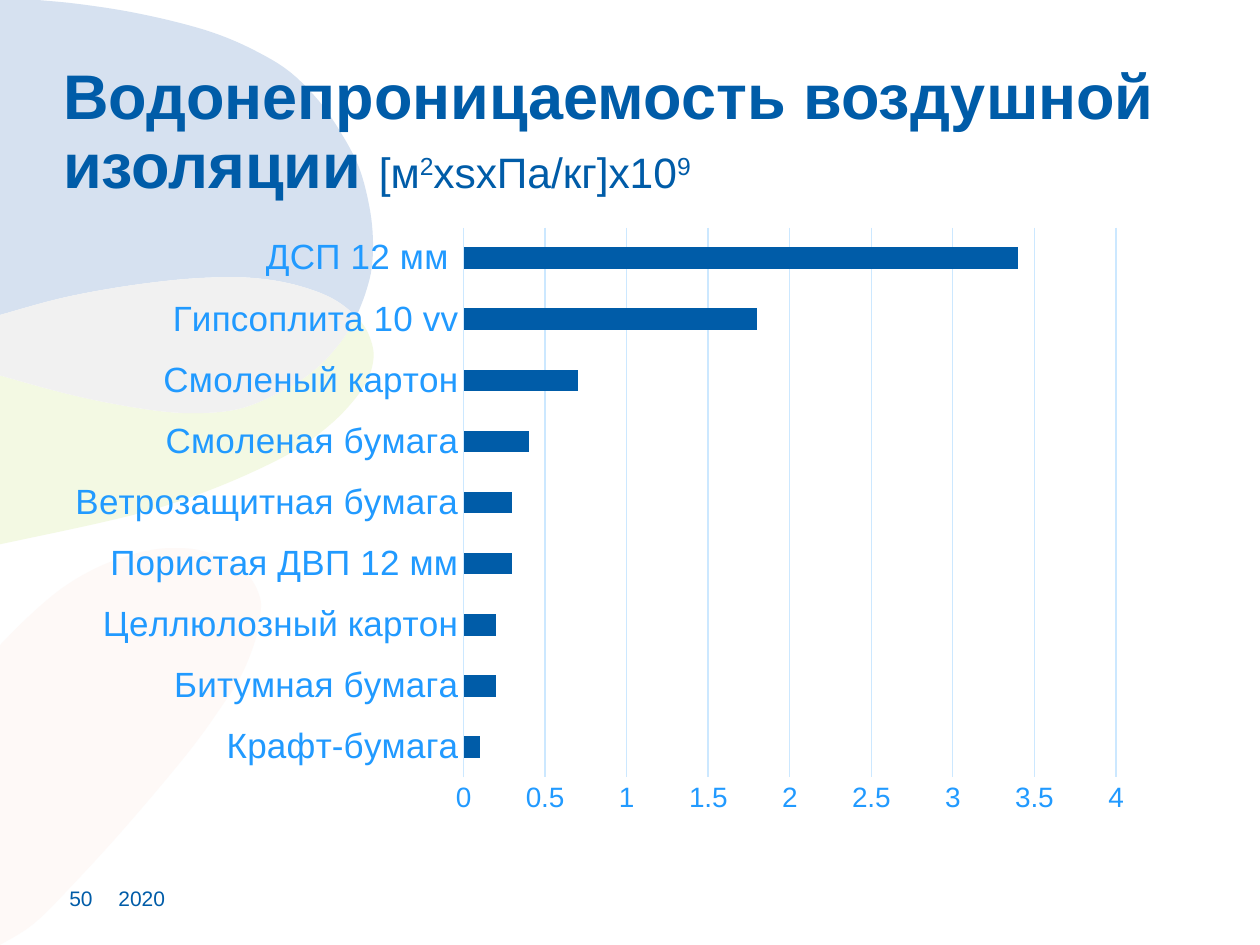
from lxml import etree
from pptx import Presentation
from pptx.chart.data import CategoryChartData
from pptx.dml.color import RGBColor
from pptx.enum.chart import XL_CHART_TYPE as ChartType, XL_TICK_MARK as TickMark
from pptx.enum.text import MSO_ANCHOR as Anchor, MSO_AUTO_SIZE as AutoSize, PP_ALIGN as Align
from pptx.util import Pt

PX = 9144  # EMU per px, 100 px to the inch
STEPS = 5  # line segments per curve span
CHART_NS = "http://schemas.openxmlformats.org/drawingml/2006/chart"


def color(hex_string):
    return RGBColor.from_string(hex_string)


def px(*lengths):
    return [length * PX for length in lengths]


def spline(points):
    """Smooth curve (Catmull-Rom) through the given points."""
    padded = [points[0], *points, points[-1]]
    curve = [points[0]]
    for a, b, c, d in zip(padded, padded[1:], padded[2:], padded[3:]):
        for step in range(1, STEPS + 1):
            t = step / STEPS
            curve.append(tuple(
                (2 * q + (r - p) * t + (2 * p - 5 * q + 4 * r - s) * t ** 2
                 + (3 * q - p - 3 * r + s) * t ** 3) / 2
                for p, q, r, s in zip(a, b, c, d)))
    return curve


class SlideBuilder:
    font_name = "Arial"
    dark = "005CA8"
    light = "219AFF"
    grid = "CCE8FF"

    def __init__(self, slide):
        self.slide = slide

    def style(self, font, size=None, hex_color=None):
        font.name = self.font_name
        font.color.rgb = color(hex_color or self.dark)
        if size:
            font.size = Pt(size)

    def prepare_frame(self, frame, anchor):
        frame.margin_left = frame.margin_right = frame.margin_top = frame.margin_bottom = 0
        frame.word_wrap = True
        frame.auto_size = AutoSize.NONE
        frame.vertical_anchor = anchor

    def petal(self, fill, *edges):
        """Closed shape whose outline runs along smooth edges."""
        outline = [px(*point) for edge in edges for point in spline(edge)]
        builder = self.slide.shapes.build_freeform(*outline[0], scale=1.0)
        builder.add_line_segments(outline[1:], close=True)
        shape = builder.convert_to_shape()
        shape.shadow.inherit = False
        shape.fill.solid()
        shape.fill.fore_color.rgb = color(fill)
        shape.line.fill.background()

    def label(self, text, *box):
        frame = self.slide.shapes.add_textbox(*px(*box)).text_frame
        self.prepare_frame(frame, Anchor.BOTTOM)
        paragraph = frame.paragraphs[0]
        paragraph.text = text
        self.style(paragraph.font, 12)

    def title(self, runs, *box):
        title = self.slide.shapes.title
        title.left, title.top, title.width, title.height = px(*box)
        self.slide.shapes._spTree.append(title._element)  # in front of the petals
        self.prepare_frame(title.text_frame, Anchor.TOP)
        paragraph = title.text_frame.paragraphs[0]
        paragraph.alignment = Align.LEFT
        paragraph.line_spacing = 0.9
        self.style(paragraph.font)
        for text, size, bold, baseline in runs:
            run = paragraph.add_run()
            run.text = text
            run.font.size = Pt(size)
            run.font.bold = bold
            if baseline:
                run.font._element.set("baseline", str(baseline * 1000))

    def style_axis(self, axis, size):
        axis.major_tick_mark = axis.minor_tick_mark = TickMark.NONE
        self.style(axis.tick_labels.font, size, self.light)

    def style_line(self, line):
        line.color.rgb = color(self.grid)
        line.width = Pt(0.75)

    def bar_chart(self, values, plot_layout, *box):
        data = CategoryChartData()
        data.categories = list(values)
        data.add_series("Series 1", list(values.values()))
        chart = self.slide.shapes.add_chart(ChartType.BAR_CLUSTERED, *px(*box), data).chart
        chart.has_legend = chart.has_title = False
        self.style(chart.font, 10)

        plot = chart.plots[0]
        plot.gap_width = 182
        plot.vary_by_categories = False
        fill = plot.series[0].format.fill
        fill.solid()
        fill.fore_color.rgb = color(self.dark)

        self.style_axis(chart.category_axis, 20)
        self.style_line(chart.category_axis.format.line)
        value_axis = chart.value_axis
        self.style_axis(value_axis, 16)
        value_axis.minimum_scale, value_axis.maximum_scale = 0, 4
        value_axis.major_unit = 0.5
        value_axis.tick_labels.number_format = "General"
        value_axis.tick_labels.number_format_is_linked = False
        value_axis.format.line.fill.background()
        value_axis.has_major_gridlines = True
        self.style_line(value_axis.major_gridlines.format.line)
        self.place_plot(chart, plot_layout)

    def place_plot(self, chart, plot_layout):
        """Fix the inner plot area as fractions of the chart."""
        def tag(name):
            return f"{{{CHART_NS}}}{name}"

        plot_area = chart._chartSpace.find(f".//{tag('plotArea')}")
        for old in plot_area.findall(tag("layout")):
            plot_area.remove(old)
        layout = etree.Element(tag("layout"))
        plot_area.insert(0, layout)
        manual = etree.SubElement(layout, tag("manualLayout"))
        settings = {"layoutTarget": "inner", "xMode": "edge", "yMode": "edge", **plot_layout}
        for name, value in settings.items():
            etree.SubElement(manual, tag(name), val=str(value))


# Edges of the background petals; the wave edges are shared by neighbours
CORAL_EDGE = [(0, 512), (23, 489), (49, 467), (76, 451), (102, 441), (123, 436), (139, 435),
              (155, 436), (172, 441), (187, 448), (199, 459), (206, 473), (207, 485), (203, 507),
              (192, 535), (175, 562), (148, 599), (100, 656), (58, 702), (27, 733), (0, 750)]
WAVE_TOP = [(0, 250), (47, 237), (94, 228), (141, 222), (178, 220), (205, 221), (230, 225),
            (253, 232), (269, 240), (283, 251)]
WAVE_BOTTOM = [(283, 251), (273, 268), (258, 286), (240, 301), (215, 315), (188, 325),
               (156, 328), (124, 326), (82, 319), (43, 310), (0, 298)]
GREEN_EDGE = [(283, 251), (291, 262), (296, 276), (296, 288), (291, 303), (279, 320), (261, 338),
              (235, 357), (202, 374), (164, 390), (123, 404), (75, 416), (0, 432)]
BLUE_EDGE = [(30, 0), (61, 3), (101, 9), (142, 18), (175, 28), (204, 41), (230, 57), (253, 80),
             (271, 106), (285, 133), (293, 163), (296, 189), (295, 213), (290, 233), (283, 251)]

PERMEABILITY = {
    "Крафт-бумага": 0.1,
    "Битумная бумага": 0.2,
    "Целлюлозный картон": 0.2,
    "Пористая ДВП 12 мм": 0.3,
    "Ветрозащитная бумага": 0.3,
    "Смоленая бумага": 0.4,
    "Смоленый картон": 0.7,
    "Гипсоплита 10 vv": 1.8,
    "ДСП 12 мм ": 3.4,
}

# Text, size, bold, baseline shift in percent
TITLE_RUNS = [
    ("Водонепроницаемость воздушной изоляции ", 36, True, 0),
    ("[м", 24.3, False, 0),
    ("2", 24.3, False, 30),
    ("xsxПа/кг]x10", 24.3, False, 0),
    ("9", 24.3, False, 30),
]


def main():
    presentation = Presentation()
    presentation.slide_width, presentation.slide_height = px(1000, 750)
    slide = presentation.slides.add_slide(presentation.slide_layouts[5])
    builder = SlideBuilder(slide)

    # Background petals
    builder.petal("FEF9F7", CORAL_EDGE)
    builder.petal("F3F9E3", GREEN_EDGE, WAVE_BOTTOM[::-1])
    builder.petal("D6E1F0", [(0, 0), (30, 0)], BLUE_EDGE, WAVE_TOP[::-1])
    builder.petal("F1F1F1", WAVE_TOP, WAVE_BOTTOM)

    # Footer
    builder.label("2020", 94, 707, 70, 16)
    builder.label("50", 55, 707, 39, 16)

    # Chart and title
    plot_layout = {"x": 0.38, "y": 0.02, "w": 0.6, "h": 0.9}
    builder.bar_chart(PERMEABILITY, plot_layout, 40, 171, 863, 485)
    builder.title(TITLE_RUNS, 50, 52, 900, 69)

    presentation.save("out.pptx")


if __name__ == "__main__":
    main()
